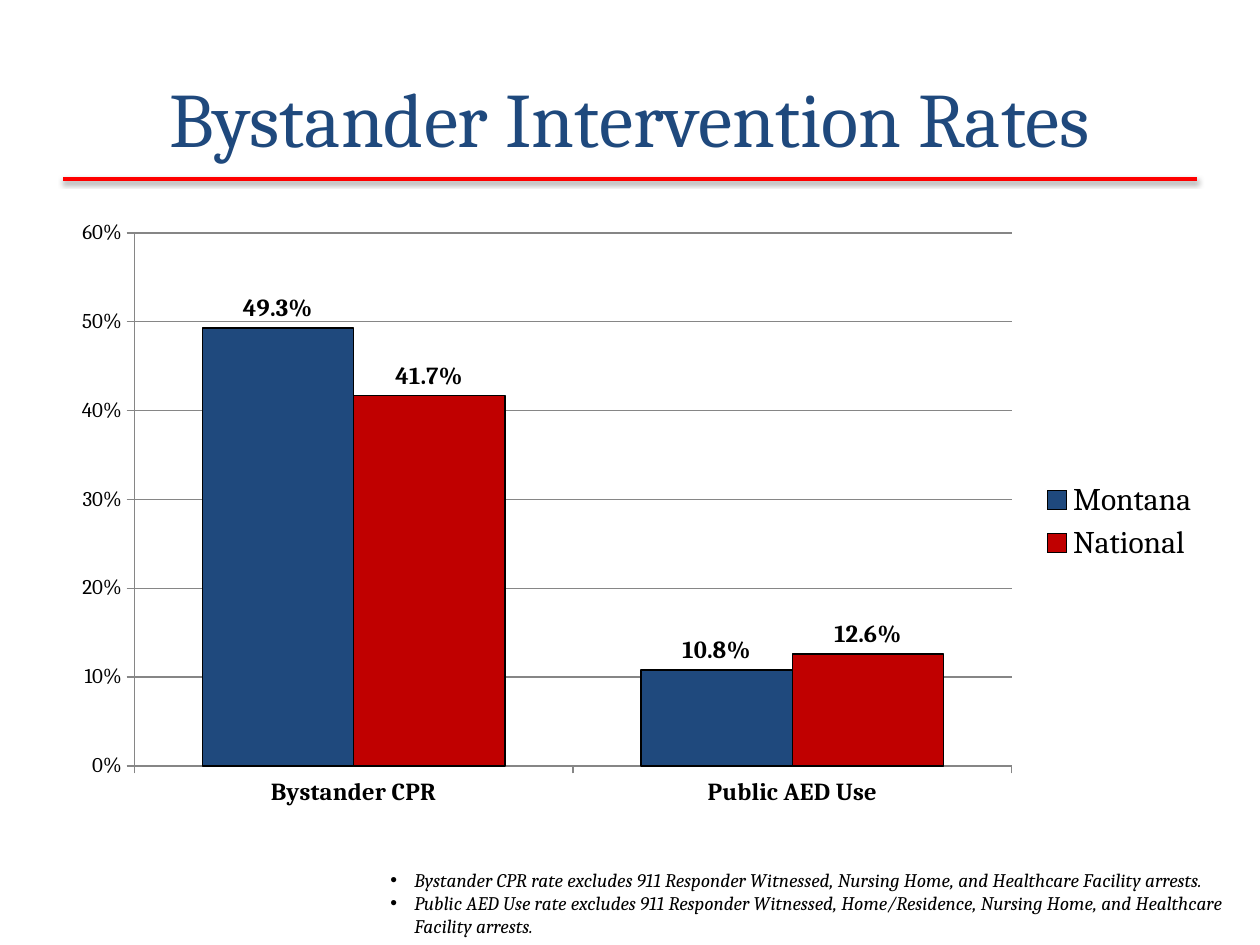
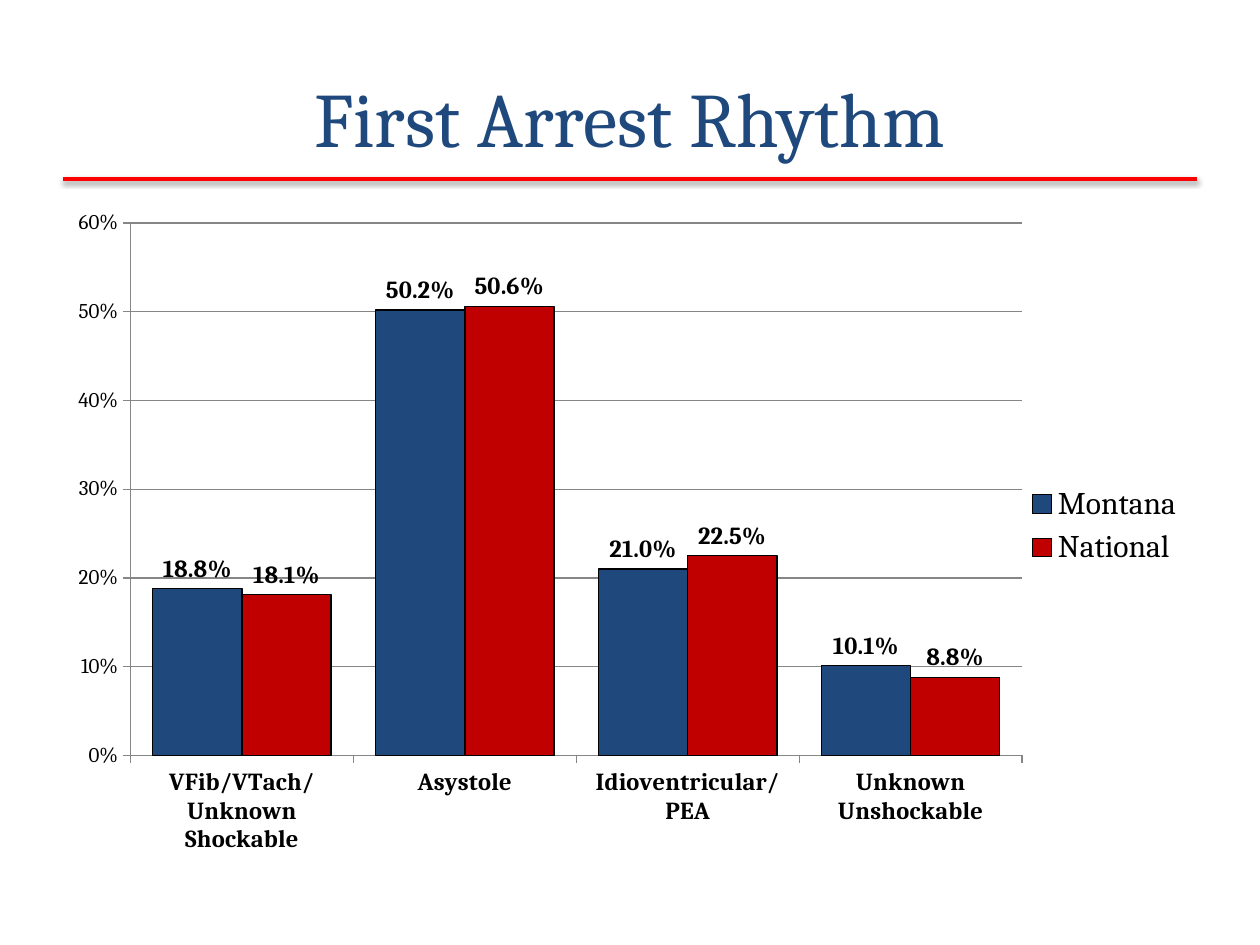
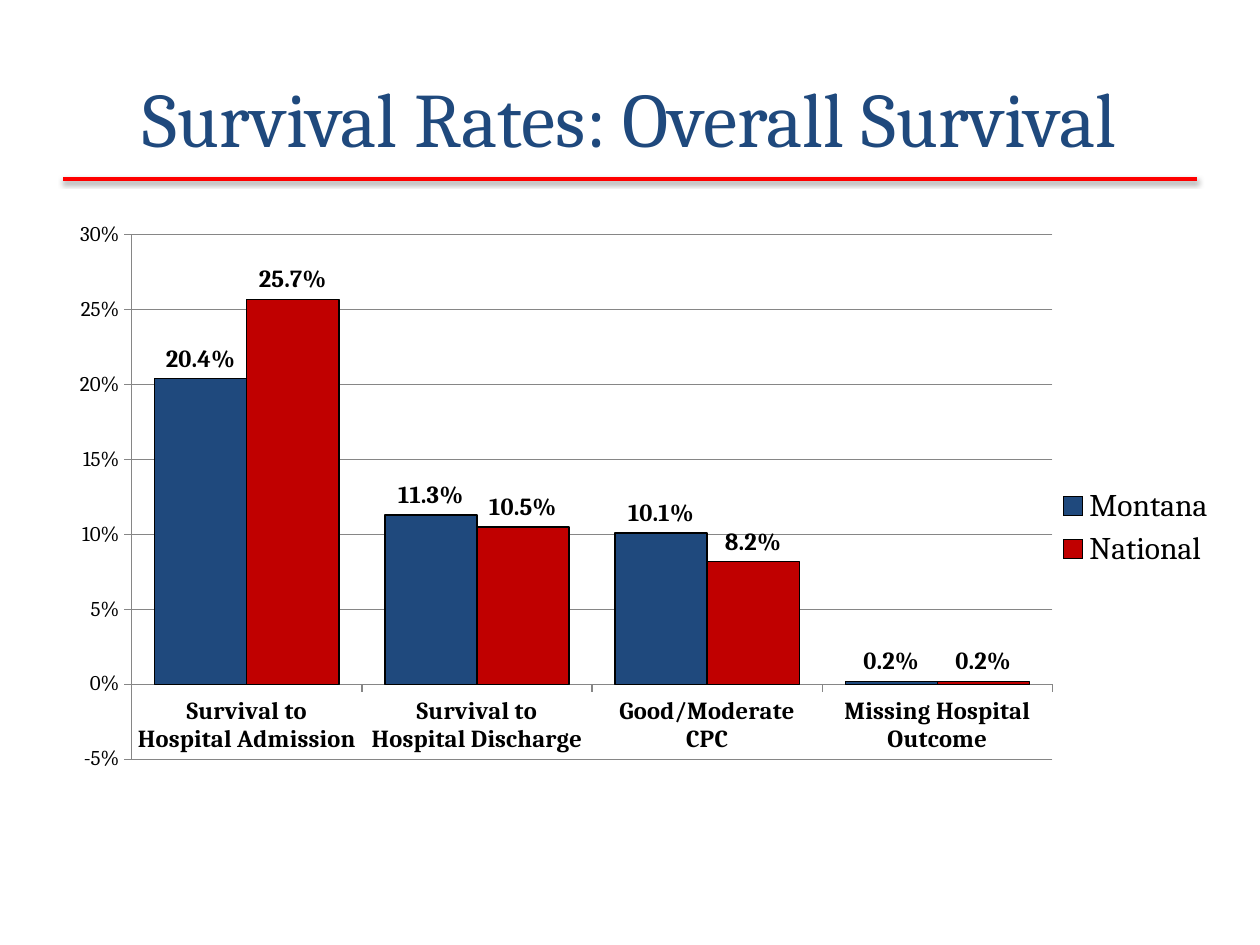
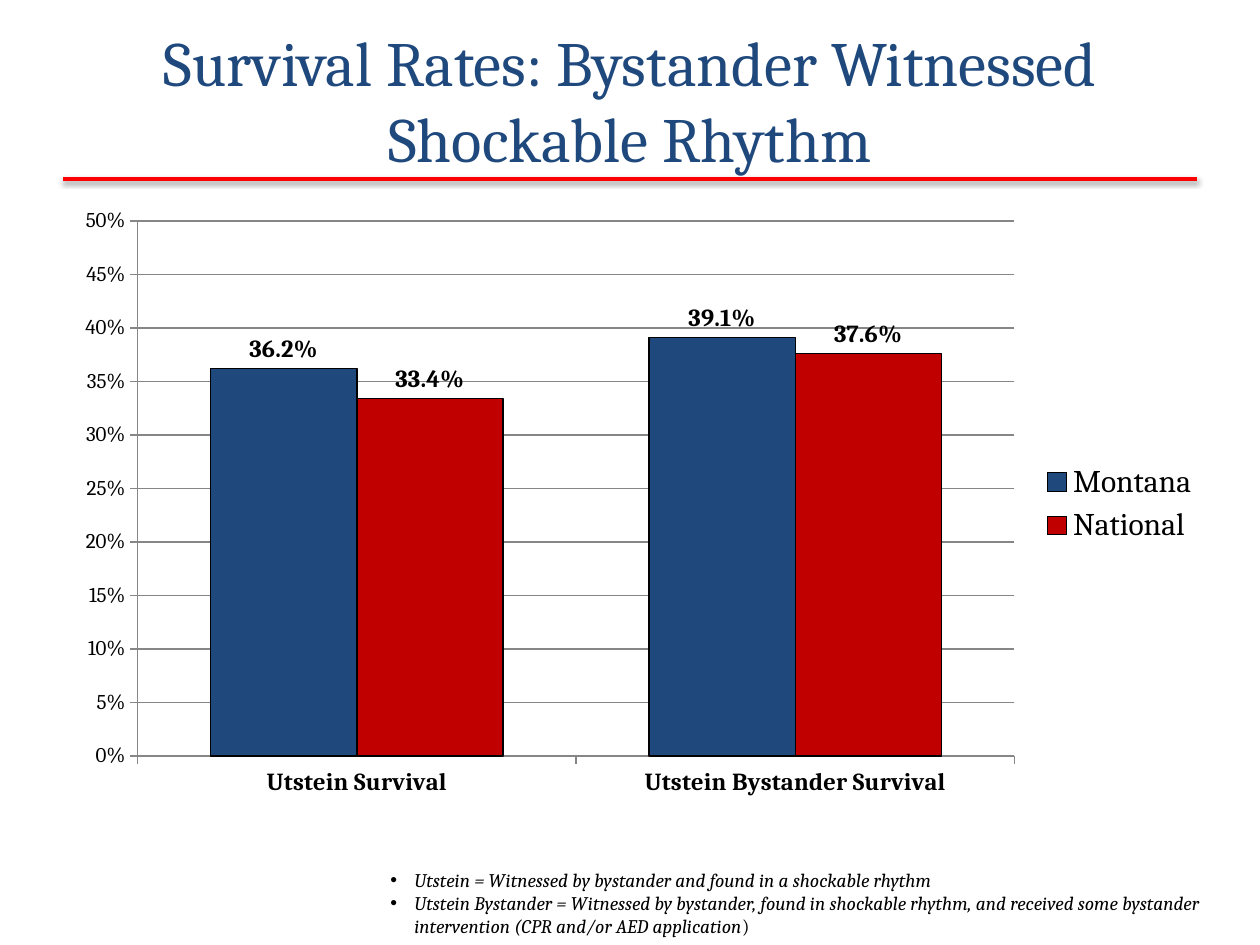
from lxml.etree import SubElement
from pptx import Presentation
from pptx.chart.data import CategoryChartData
from pptx.dml.color import RGBColor
from pptx.enum.chart import XL_CHART_TYPE as ChartType
from pptx.enum.chart import XL_LABEL_POSITION as LabelPos
from pptx.enum.chart import XL_LEGEND_POSITION as LegendPos
from pptx.enum.chart import XL_TICK_MARK as Tick
from pptx.enum.shapes import MSO_CONNECTOR as Connector
from pptx.enum.text import MSO_ANCHOR as Anchor
from pptx.enum.text import MSO_AUTO_SIZE as AutoSize
from pptx.enum.text import PP_ALIGN as Align
from pptx.oxml import parse_xml
from pptx.oxml.ns import nsdecls, qn
from pptx.util import Inches, Pt

FONT = "Cambria"
BLACK, NAVY, RED, RULE, GRAY = "000000", "1F497D", "C00000", "FF0000", "868686"
SERIES_COLORS = {"Montana": NAVY, "National": RED}
TITLE_BOX = (0.5, 0.3, 9, 1.25)
NOTES_BOX = (3, 6.84, 7, 0.66)

SLIDES = [
    dict(
        title="Bystander Intervention Rates",
        chart_box=(0.27, 1.64, 9.35, 5),
        categories=["Bystander CPR", "Public AED Use"],
        montana=[0.493, 0.108],
        national=[0.417, 0.126],
        scale=(0, 0.6, 0.1),
        gap=90,
        plot=(0.085, 0.042, 0.745, 0.846),
        notes=[
            ["Bystander CPR rate excludes 911 Responder Witnessed, Nursing Home, "
             "and Healthcare Facility arrests."],
            ["Public AED Use rate excludes 911 Responder Witnessed, Home/Residence, "
             "Nursing Home, and Healthcare Facility arrests."],
        ],
    ),
    dict(
        title="First Arrest Rhythm",
        chart_box=(0.25, 1.55, 9.25, 5.25),
        categories=["VFib/VTach/\nUnknown Shockable", "Asystole",
                    "Idioventricular/\nPEA", "Unknown\nUnshockable"],
        montana=[0.188, 0.502, 0.21, 0.101],
        national=[0.181, 0.506, 0.225, 0.088],
        scale=(0, 0.6, 0.1),
        gap=50,
        plot=(0.085, 0.042, 0.765, 0.805),
    ),
    dict(
        title="Survival Rates: Overall Survival",
        chart_box=(0.5, 1.7, 9.25, 4.98),
        categories=["Survival to Hospital Admission", "Survival to Hospital Discharge",
                    "Good/Moderate\nCPC", "Missing Hospital Outcome"],
        montana=[0.204, 0.113, 0.101, 0.002],
        national=[0.257, 0.105, 0.082, 0.002],
        scale=(-0.05, 0.3, 0.05),
        gap=50,
        plot=(0.059, 0.033, 0.79, 0.836),
    ),
    dict(
        title="Survival Rates: Bystander Witnessed Shockable Rhythm",
        title_box=(0.5, 0.25, 9, 1.08),
        title_size=36,
        chart_box=(0.5, 1.57, 9.12, 4.86),
        categories=["Utstein Survival", "Utstein Bystander Survival"],
        montana=[0.362, 0.391],
        national=[0.334, 0.376],
        scale=(0, 0.5, 0.05),
        gap=100,
        plot=(0.065, 0.038, 0.763, 0.874),
        notes=[
            ["Utstein = Witnessed by bystander and found in a shockable rhythm"],
            ["Utstein Bystander = Witnessed by bystander, found in shockable rhythm, "
             "and received some bystander intervention (CPR and/or AED application", ")"],
        ],
    ),
]


def rgb(color):
    return RGBColor.from_string(color)


def inches(box):
    return [Inches(v) for v in box]


def style_font(font, size, color=BLACK, bold=False, italic=False):
    font.name = FONT
    font.size = Pt(size)
    font.color.rgb = rgb(color)
    font.bold = bold
    font.italic = italic


def add_rule(s, left=0.5, top=1.42, width=9):
    line = s.shapes.add_connector(Connector.STRAIGHT, *inches((left, top, left + width, top)))
    line.line.color.rgb = rgb(RULE)
    line.line.width = Pt(2)
    line._element.spPr.append(parse_xml(
        f'<a:effectLst {nsdecls("a")}>'
        '<a:outerShdw blurRad="40000" dist="20000" dir="5400000" rotWithShape="0">'
        f'<a:srgbClr val="{BLACK}"><a:alpha val="38000"/></a:srgbClr>'
        '</a:outerShdw></a:effectLst>'))


def add_title(s, text, box, size):
    tf = s.shapes.add_textbox(*inches(box)).text_frame
    tf.word_wrap = True
    tf.vertical_anchor = Anchor.MIDDLE
    tf.text = text
    p = tf.paragraphs[0]
    p.alignment = Align.CENTER
    style_font(p.runs[0].font, size, NAVY)


def add_notes(s, notes, box):
    tf = s.shapes.add_textbox(*inches(box)).text_frame
    tf.word_wrap = True
    tf.auto_size = AutoSize.SHAPE_TO_FIT_TEXT
    for i, (text, *upright) in enumerate(notes):
        p = tf.add_paragraph() if i else tf.paragraphs[0]
        p.text = text
        pPr = p._p.get_or_add_pPr()
        pPr.set("marL", str(Inches(0.19)))
        pPr.set("indent", str(-Inches(0.19)))
        SubElement(pPr, qn("a:buFont"), typeface="Arial")
        SubElement(pPr, qn("a:buChar"), char="•")
        style_font(p.runs[0].font, 11, italic=True)
        for extra in upright:
            r = p.add_run()
            r.text = extra
            style_font(r.font, 11)


def set_plot_area(chart, plot):
    area = chart._chartSpace.chart.plotArea
    for old in area.findall(qn("c:layout")):
        area.remove(old)
    parts = [("layoutTarget", "inner"), ("xMode", "edge"), ("yMode", "edge"),
             *zip("xywh", plot)]
    inner = "".join(f'<c:{tag} val="{val}"/>' for tag, val in parts)
    area.insert(0, parse_xml(
        f'<c:layout {nsdecls("c")}><c:manualLayout>{inner}</c:manualLayout></c:layout>'))


def style_axes(chart, scale):
    cat, val = chart.category_axis, chart.value_axis
    for axis, size, bold in ((cat, 14, True), (val, 12, False)):
        axis.major_tick_mark = Tick.OUTSIDE
        axis.minor_tick_mark = Tick.NONE
        axis.format.line.color.rgb = rgb(GRAY)
        style_font(axis.tick_labels.font, size, bold=bold)
    val.minimum_scale, val.maximum_scale, val.major_unit = scale
    val.tick_labels.number_format = "0%"
    val.tick_labels.number_format_is_linked = False
    val.has_major_gridlines = True
    val.major_gridlines.format.line.color.rgb = rgb(GRAY)


def style_series(series):
    fill = series.format.fill
    fill.solid()
    fill.fore_color.rgb = rgb(SERIES_COLORS[series.name])
    series.format.line.color.rgb = rgb(BLACK)
    series.format.line.width = Pt(0.75)
    series.invert_if_negative = False
    labels = series.data_labels
    labels.show_value = True
    labels.position = LabelPos.OUTSIDE_END
    labels.number_format = "0.0%"
    labels.number_format_is_linked = False
    style_font(labels.font, 14, bold=True)


def add_rates_chart(s, box, categories, montana, national, scale, gap, plot):
    data = CategoryChartData(number_format="0.0%")
    data.categories = categories
    for name, values in zip(SERIES_COLORS, (montana, national)):
        data.add_series(name, values)
    chart = s.shapes.add_chart(ChartType.COLUMN_CLUSTERED, *inches(box), data).chart
    style_font(chart.font, 18)
    chart.has_title = False
    chart.has_legend = True
    chart.legend.position = LegendPos.RIGHT
    chart.legend.include_in_layout = False
    style_font(chart.legend.font, 18)
    bars = chart.plots[0]
    bars.gap_width = gap
    bars.overlap = 0
    bars.vary_by_categories = False
    for series in bars.series:
        style_series(series)
    style_axes(chart, scale)
    set_plot_area(chart, plot)


def add_rates_slide(prs, title, chart_box, title_box=TITLE_BOX, title_size=44,
                    notes=(), **chart):
    s = prs.slides.add_slide(prs.slide_layouts[6])
    add_rule(s)
    add_title(s, title, title_box, title_size)
    add_rates_chart(s, chart_box, **chart)
    if notes:
        add_notes(s, notes, NOTES_BOX)


def main():
    prs = Presentation()
    prs.slide_width, prs.slide_height = Inches(10), Inches(7.5)
    for content in SLIDES:
        add_rates_slide(prs, **content)
    prs.save("out.pptx")


if __name__ == "__main__":
    main()
